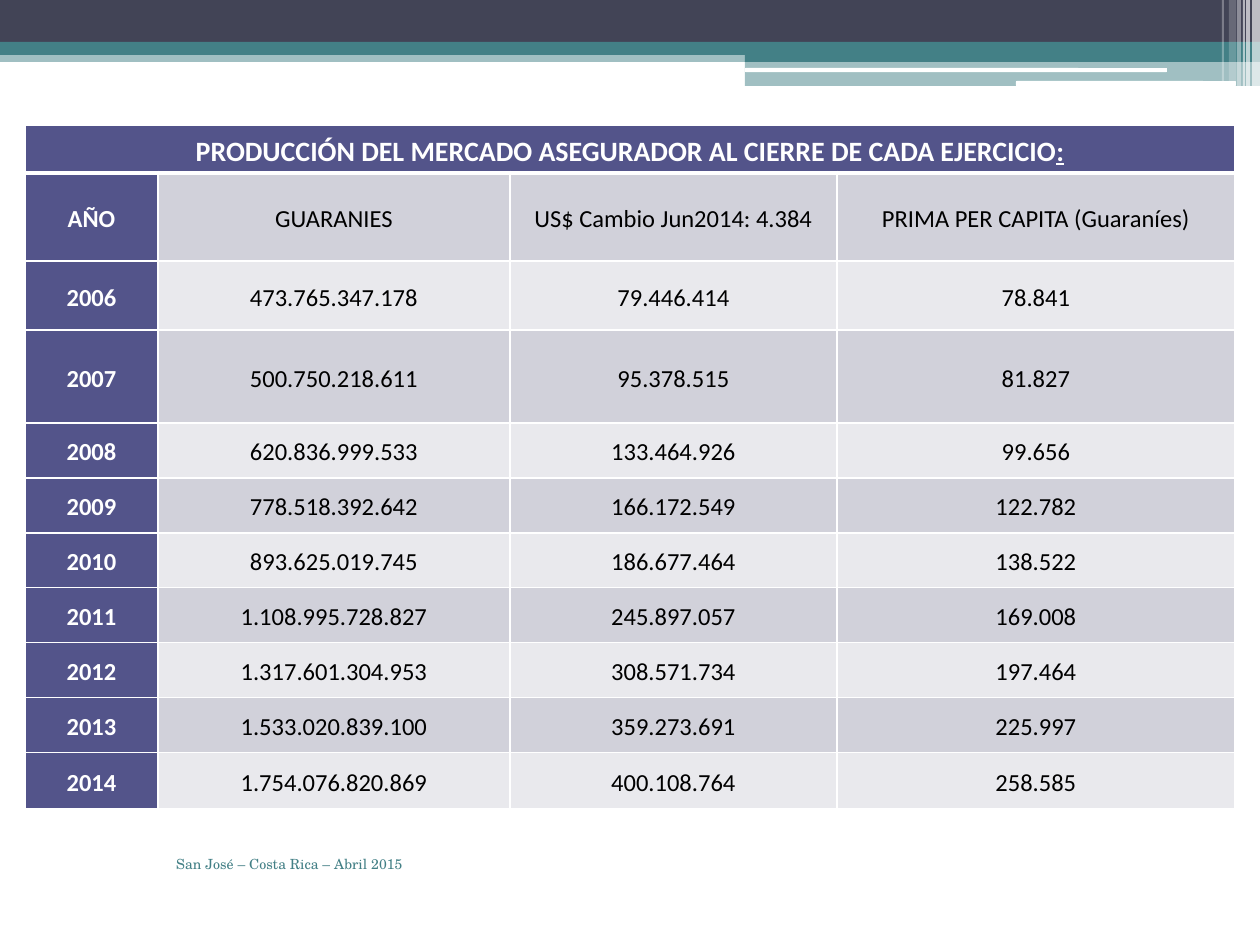
import lxml.etree
import pptx
import pptx.dml.color
import pptx.enum.shapes
import pptx.enum.text
import pptx.oxml.ns
import pptx.util

PX = 914400 / 126
COLORS = {
    "slate": "424456", "teal": "438086", "white": "FFFFFF", "black": "000000",
    "indigo": "53548A", "gray": "D1D1DA", "pale": "E9E9ED",
}
ALIGN = pptx.enum.text.PP_ALIGN
qn = pptx.oxml.ns.qn


def px(length):
    return pptx.util.Emu(round(length * PX))


def write_text(para, text, size=14, font="Calibri", color="black", bold=False,
               underline=False, align=ALIGN.CENTER, spacing=1.15):
    para.alignment = align
    para.line_spacing = spacing
    span = para.add_run()
    span.text = text
    span.font.size = pptx.util.Pt(size)
    span.font.name = font
    span.font.bold = bold
    span.font.underline = underline
    span.font.color.rgb = pptx.dml.color.RGBColor.from_string(COLORS[color])


deck = pptx.Presentation()
deck.slide_width = px(1260)
deck.slide_height = px(945)
page = deck.slides.add_slide(deck.slide_layouts[6])

# Header bands and stripes: left, top, width, height, color, opacity %, rounded
bands = [
    (0, 50, 1260, 12, "teal", 50, False),
    (0, 0, 1260, 42, "slate", 100, False),
    (0, 42, 1260, 13, "teal", 100, False),
    (745, 49, 515, 13, "teal", 100, False),
    (745, 61, 515, 25, "teal", 50, False),
    (745, 68, 422, 4, "white", 100, True),
    (1016, 81, 220, 5, "white", 100, True),
    (1252, 0, 8, 86, "white", 65, False),
    (1246, 0, 4, 86, "white", 65, False),
    (1243, 0, 2, 86, "white", 60, False),
    (1237, 0, 4, 86, "white", 40, False),
    (1229, 0, 7, 81, "white", 20, False),
    (1222, 0, 2, 81, "white", 30, False),
]
SHAPE = pptx.enum.shapes.MSO_SHAPE
for left, top, width, height, color, opacity, rounded in bands:
    kind = SHAPE.ROUNDED_RECTANGLE if rounded else SHAPE.RECTANGLE
    band = page.shapes.add_shape(kind, px(left), px(top), px(width), px(height))
    band.shadow.inherit = False
    band.line.fill.background()
    band.fill.solid()
    band.fill.fore_color.rgb = pptx.dml.color.RGBColor.from_string(COLORS[color])
    if opacity < 100:
        tint = band.fill._xPr.find(".//" + qn("a:srgbClr"))
        lxml.etree.SubElement(tint, qn("a:alpha"), val=str(opacity * 1000))

# Production table
records = [
    ("PRODUCCIÓN DEL MERCADO ASEGURADOR AL CIERRE DE CADA EJERCICIO", "", "", ""),
    ("AÑO", "GUARANIES", "US$ Cambio Jun2014: 4.384", "PRIMA PER CAPITA (Guaraníes)"),
    ("2006", "473.765.347.178", "79.446.414", "78.841"),
    ("2007", "500.750.218.611", "95.378.515", "81.827"),
    ("2008", "620.836.999.533", "133.464.926", "99.656"),
    ("2009", "778.518.392.642", "166.172.549", "122.782"),
    ("2010", "893.625.019.745", "186.677.464", "138.522"),
    ("2011", "1.108.995.728.827", "245.897.057", "169.008"),
    ("2012", "1.317.601.304.953", "308.571.734", "197.464"),
    ("2013", "1.533.020.839.100", "359.273.691", "225.997"),
    ("2014", "1.754.076.820.869", "400.108.764", "258.585"),
]
column_widths = [133, 352, 327, 398]
row_heights = [48, 88, 69, 93] + [55] * 6 + [56]
table = page.shapes.add_table(len(records), len(column_widths), px(25), px(125),
                              px(sum(column_widths)), px(sum(row_heights))).table
for column, width in zip(table.columns, column_widths):
    column.width = px(width)
for row, height in zip(table.rows, row_heights):
    row.height = px(height)
table.cell(0, 0).merge(table.cell(0, 3))

for r, record in enumerate(records):
    for c, text in enumerate(record):
        cell = table.cell(r, c)
        heading = r == 0 or c == 0
        fill = "indigo" if heading else "gray" if r % 2 else "pale"
        # Borders come before the fill in the cell properties
        properties = cell._tc.get_or_add_tcPr()
        for side in ("L", "R", "T", "B"):
            thick = (r == 0 and side == "B") or (r == 1 and side == "T")
            border = lxml.etree.SubElement(properties, qn("a:ln" + side),
                                           w=str(pptx.util.Pt(3 if thick else 1)))
            paint = lxml.etree.SubElement(border, qn("a:solidFill"))
            lxml.etree.SubElement(paint, qn("a:srgbClr"), val=COLORS["white"])
        cell.fill.solid()
        cell.fill.fore_color.rgb = pptx.dml.color.RGBColor.from_string(COLORS[fill])
        cell.vertical_anchor = pptx.enum.text.MSO_ANCHOR.MIDDLE
        cell.margin_left = cell.margin_right = px(6)
        cell.margin_top = cell.margin_bottom = 0
        if text:
            write_text(cell.text_frame.paragraphs[0], text, size=14 if r else 16,
                       color="white" if heading else "black", bold=heading)
write_text(table.cell(0, 0).text_frame.paragraphs[0], ":", size=16,
           color="white", bold=True, underline=True)

# Footer
footer = page.shapes.add_textbox(px(105), px(849), px(338), px(63)).text_frame
footer.word_wrap = True
footer.margin_right = px(40)
write_text(footer.paragraphs[0], "San José – Costa Rica – Abril 2015", size=8,
           font="TeX Gyre Schola", color="teal", align=ALIGN.RIGHT, spacing=1.0)

deck.save("out.pptx")
